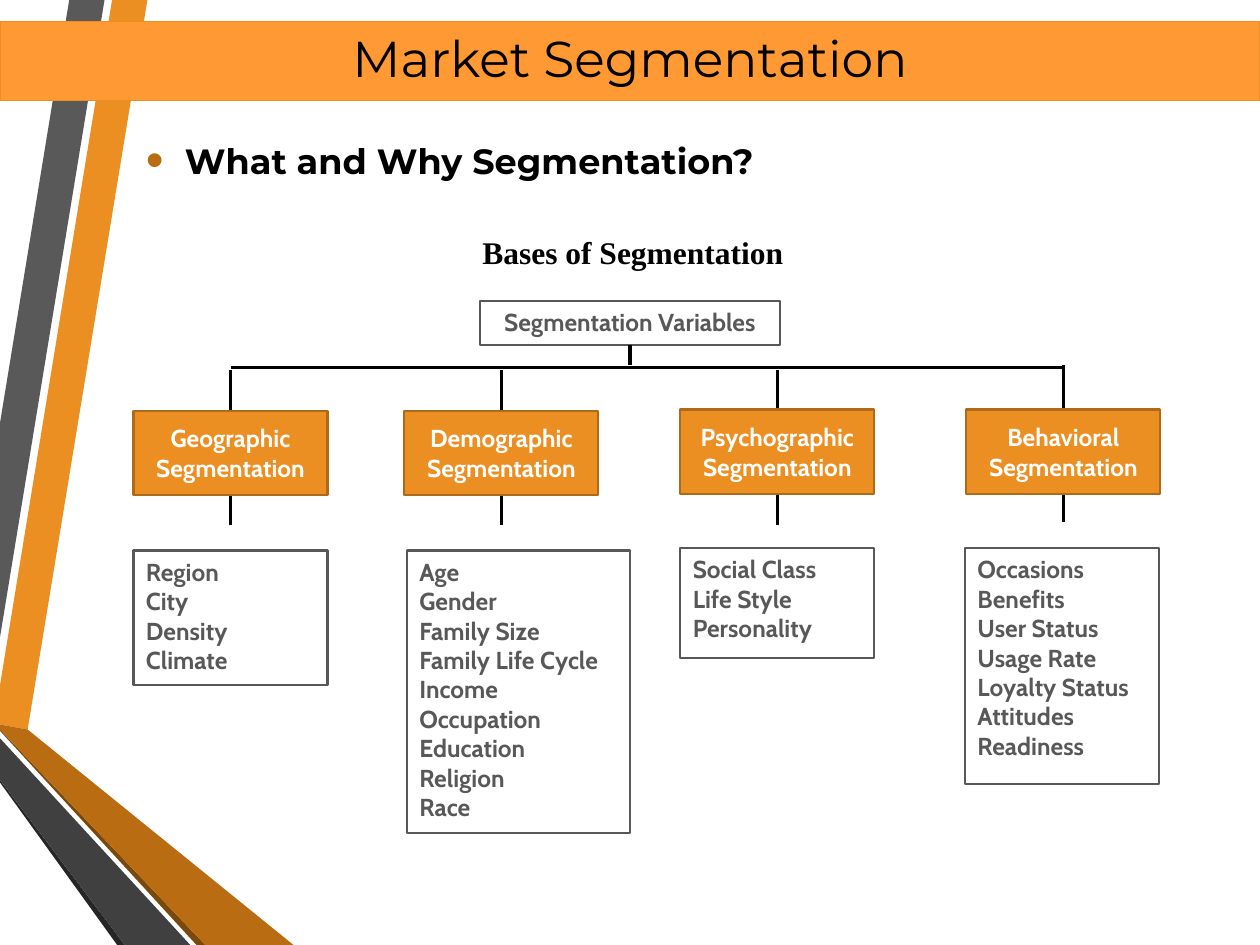
from lxml import etree
from pptx import Presentation
from pptx.dml.color import RGBColor
from pptx.enum.shapes import MSO_CONNECTOR, MSO_SHAPE
from pptx.enum.text import MSO_ANCHOR, PP_ALIGN
from pptx.oxml.ns import qn
from pptx.util import Inches, Pt

LEFT, CENTER = PP_ALIGN.LEFT, PP_ALIGN.CENTER
TOP, MIDDLE = MSO_ANCHOR.TOP, MSO_ANCHOR.MIDDLE
RECTANGLE, STRAIGHT = MSO_SHAPE.RECTANGLE, MSO_CONNECTOR.STRAIGHT
BOTTOM_SIDE = 2

# Grid: 100 columns by 75 rows of square cells
CELL = Inches(0.1)
COLUMNS, ROWS = 100, 75

BLACK, WHITE, GRAY = "000000", "FFFFFF", "585858"
ORANGE, RUST, BROWN, TITLE_ORANGE = "EB8F22", "B96C11", "AE6A19", "FF9933"

# Side ribbons: colour and corner points (column, row)
RIBBONS = [
    (ORANGE, [(0, 54.4), (0, 57.5), (2.2, 57.9), (11.7, 0), (8.9, 0)]),
    ("595959", [(8.3, 0), (5.5, 0), (0, 33.6), (0, 50.6)]),
    ("262626", [(0, 61.9), (0, 62.1), (9.3, 75), (9.9, 75)]),
    ("7B480B", [(0, 57.9), (0, 58), (15.6, 75), (16.3, 75)]),
    (RUST, [(0, 57.9), (16.3, 75), (23.3, 75), (2.2, 57.9), (0, 57.5)]),
    ("404040", [(0, 61.9), (9.9, 75), (15.1, 75), (0, 58.6)]),
]

# Branches: name, box corner, stem (column, top, end), list box, variables
BRANCHES = [
    ("Geographic", (10.6, 32.6), (18.3, 29.4, 41.7), (10.6, 43.7, 15.4, 10.7),
     ["Region", "City", "Density", "Climate"]),
    ("Demographic", (32.1, 32.6), (39.8, 29.4, 41.7), (32.3, 43.7, 17.7, 22.4),
     ["Age", "Gender", "Family Size", "Family Life Cycle", "Income",
      "Occupation", "Education", "Religion", "Race"]),
    ("Psychographic", (54, 32.5), (61.7, 29.4, 41.7), (54, 43.5, 15.4, 8.7),
     ["Social Class", "Life Style", "Personality"]),
    ("Behavioral", (76.7, 32.5), (84.4, 29, 41.4), (76.6, 43.5, 15.4, 18.7),
     ["Occasions", "Benefits", "User Status", "Usage Rate",
      "Loyalty Status", "Attitudes", "Readiness"]),
]
BRANCH_SIZE = (15.4, 6.7)
BAR_ROW = 29.2


def color(hex_text):
    return RGBColor.from_string(hex_text)


def cells(*counts):
    return [round(count * CELL) for count in counts]


def write(frame, lines, *, size=14, font="Cabin", ink=GRAY, bold=True,
          align=LEFT, anchor=TOP, wrap=True):
    """Fill a text frame with one paragraph for each line."""
    frame.word_wrap = wrap
    frame.vertical_anchor = anchor
    for number, line in enumerate(lines):
        paragraph = frame.add_paragraph() if number else frame.paragraphs[0]
        paragraph.alignment = align
        run = paragraph.add_run()
        run.text = line
        run.font.size, run.font.name, run.font.bold = Pt(size), font, bold
        run.font.color.rgb = color(ink)


class SlideBuilder:
    line_width = 1.75
    border_width = 1.25

    def __init__(self, slide):
        self.shapes = slide.shapes

    def ribbon(self, fill, points):
        start, *others = [cells(*point) for point in points]
        builder = self.shapes.build_freeform(*start)
        builder.add_line_segments(others, close=True)
        shape = builder.convert_to_shape()
        shape.shadow.inherit = False
        shape.fill.solid()
        shape.fill.fore_color.rgb = color(fill)
        shape.line.fill.background()

    def box(self, area, lines, border=GRAY, fill=None, width=border_width,
            **style):
        shape = self.shapes.add_shape(RECTANGLE, *cells(*area))
        shape.shadow.inherit = False
        if fill:
            shape.fill.solid()
            shape.fill.fore_color.rgb = color(fill)
        else:
            shape.fill.background()
        shape.line.color.rgb = color(border)
        shape.line.width = Pt(width)
        write(shape.text_frame, lines, **style)
        return shape

    def text(self, area, line, **style):
        frame = self.shapes.add_textbox(*cells(*area)).text_frame
        write(frame, [line], **style)
        return frame

    def bullet_text(self, area, line, **style):
        paragraph = self.text(area, line, **style).paragraphs[0]
        paragraph.space_before, paragraph.space_after = Pt(4), Pt(6)
        properties = paragraph._p.get_or_add_pPr()
        indent = Inches(0.31)
        properties.set("marL", str(indent))
        properties.set("indent", str(-indent))
        bullet_color = etree.SubElement(properties, qn("a:buClr"))
        etree.SubElement(bullet_color, qn("a:srgbClr"), val=RUST)
        etree.SubElement(properties, qn("a:buSzPct"), val="145000")
        etree.SubElement(properties, qn("a:buFont"), typeface="Arial")
        etree.SubElement(properties, qn("a:buChar"), char="•")

    def line(self, start, end, source=None):
        connector = self.shapes.add_connector(
            STRAIGHT, *cells(*start), *cells(*end))
        connector.line.color.rgb = color(BLACK)
        connector.line.width = Pt(self.line_width)
        etree.SubElement(connector._element.spPr, qn("a:effectLst"))
        if source is not None:
            connector.begin_connect(source, BOTTOM_SIDE)


def main():
    deck = Presentation()
    deck.slide_width, deck.slide_height = cells(COLUMNS, ROWS)
    page = SlideBuilder(deck.slides.add_slide(deck.slide_layouts[6]))

    # Side decoration
    for fill, points in RIBBONS:
        page.ribbon(fill, points)

    # Stems run behind the branch boxes
    for _, _, (column, top, end), _, _ in BRANCHES:
        page.line((column, top), (column, end))

    # Headings
    page.box((0, 1.7, COLUMNS, 6.3), ["Market Segmentation"], ORANGE,
             TITLE_ORANGE, width=0.75, size=28.8, font="Montserrat",
             ink=BLACK, bold=False, align=CENTER)
    page.bullet_text((10.6, 9.7, 84.3, 6), "What and Why Segmentation?",
                     size=20, font="Montserrat", ink=BLACK, anchor=MIDDLE)
    page.text((37.3, 18, 26.1, 4), "Bases of Segmentation", size=18,
              font="Times New Roman", ink=BLACK, wrap=False)

    # Branches and their variables
    for name, corner, _, list_area, variables in BRANCHES:
        page.box(corner + BRANCH_SIZE, [f"{name} Segmentation"], BROWN, ORANGE,
                 ink=WHITE, align=CENTER, anchor=MIDDLE)
        page.box(list_area, variables)

    # Root of the tree and the bar that joins the branches
    root = page.box((38.1, 23.9, 23.8, 3.5), ["Segmentation Variables"],
                    align=CENTER)
    page.line((BRANCHES[0][2][0], BAR_ROW), (BRANCHES[-1][2][0], BAR_ROW))
    page.line((50, 27.4), (50, 29), source=root)

    deck.save("out.pptx")


if __name__ == "__main__":
    main()
